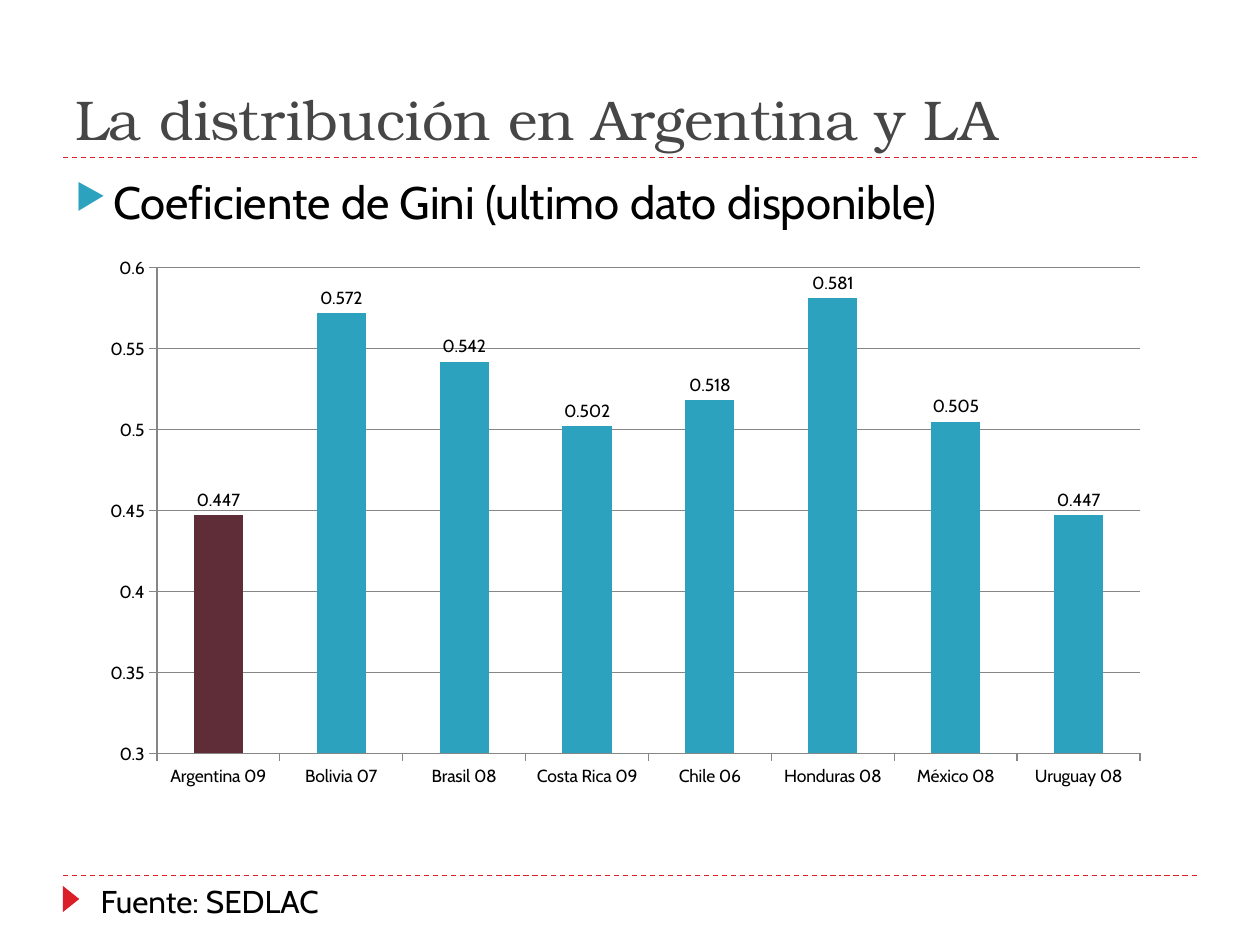
import pptx
import pptx.chart.data
import pptx.dml.color
import pptx.enum.chart
import pptx.enum.dml
import pptx.enum.shapes
import pptx.enum.text
import pptx.oxml
import pptx.oxml.ns
import pptx.util
from lxml import etree

Pt = pptx.util.Pt
qn = pptx.oxml.ns.qn
COLORS = {"red": "DA1F28", "title": "464646", "text": "000000",
          "bar": "2DA2BF", "argentina": "5E2D37", "grid": "868686"}


def rgb(name):
    return pptx.dml.color.RGBColor.from_string(COLORS[name])


def add_text(left, top, width, height, text, size, font, color):
    box = slide.shapes.add_textbox(Pt(left), Pt(top), Pt(width), Pt(height))
    box.text_frame.word_wrap = True
    run = box.text_frame.paragraphs[0].add_run()
    run.text = text
    run.font.size = Pt(size)
    run.font.name = font
    run.font.color.rgb = rgb(color)
    return box.text_frame


deck = pptx.Presentation()
deck.slide_width, deck.slide_height = Pt(720), Pt(540)
slide = deck.slides.add_slide(deck.slide_layouts[6])

# Dashed rules under the title and above the footer
for y in (500.4, 90):
    rule = slide.shapes.add_connector(
        pptx.enum.shapes.MSO_CONNECTOR.STRAIGHT, Pt(36), Pt(y), Pt(684), Pt(y))
    rule.line.color.rgb = rgb("red")
    rule.line.width = Pt(0.75)
    rule.line.dash_style = pptx.enum.dml.MSO_LINE.DASH
    etree.SubElement(rule.element.spPr, qn("a:effectLst"))

# Footer marker
marker = slide.shapes.add_shape(
    pptx.enum.shapes.MSO_SHAPE.ISOSCELES_TRIANGLE, Pt(33.1), Pt(509), Pt(15), Pt(9.4))
marker.rotation = 90
marker.shadow.inherit = False
marker.fill.solid()
marker.fill.fore_color.rgb = rgb("red")
marker.line.fill.background()

# Title
title = add_text(36, 12.2, 648, 77.8, "La distribución en Argentina y LA",
                 32, "TeX Gyre Bonum", "title")
title.vertical_anchor = pptx.enum.text.MSO_ANCHOR.BOTTOM

# Subtitle with a triangular bullet
subtitle = add_text(36, 95.8, 648, 388.8, "Coeficiente de Gini (ultimo dato disponible)",
                    26, "Cabin", "text")
subtitle.paragraphs[0].space_before = Pt(6)
bullet = subtitle.paragraphs[0]._p.get_or_add_pPr()
bullet.set("marL", str(Pt(21.6)))
bullet.set("indent", str(Pt(-21.6)))
bullet_color = etree.SubElement(bullet, qn("a:buClr"))
etree.SubElement(bullet_color, qn("a:srgbClr"), val=COLORS["bar"])
etree.SubElement(bullet, qn("a:buSzPct"), val="76000")
etree.SubElement(bullet, qn("a:buChar"), char="▶")

# Gini chart
gini = {"Argentina 09": 0.447, "Bolivia 07": 0.572, "Brasil 08": 0.542,
        "Costa Rica 09": 0.502, "Chile 06": 0.518, "Honduras 08": 0.581,
        "México 08": 0.505, "Uruguay 08": 0.447}
chart_data = pptx.chart.data.CategoryChartData()
chart_data.categories = list(gini)
chart_data.add_series("Series 1", list(gini.values()))
chart = slide.shapes.add_chart(
    pptx.enum.chart.XL_CHART_TYPE.COLUMN_CLUSTERED,
    Pt(50.4), Pt(140.4), Pt(613.4), Pt(315.4), chart_data).chart
chart.has_legend = False
chart.has_title = False
chart.font.size = Pt(10)
chart.font.name = "Cabin"
chart.font.color.rgb = rgb("text")

# Bars and value labels
columns = chart.plots[0]
columns.gap_width = 150
columns.vary_by_categories = False
series = columns.series[0]
series.invert_if_negative = False
for bar, color in ((series, "bar"), (series.points[0], "argentina")):
    bar.format.fill.solid()
    bar.format.fill.fore_color.rgb = rgb(color)
columns.has_data_labels = True
columns.data_labels.show_value = True
columns.data_labels.position = pptx.enum.chart.XL_LABEL_POSITION.OUTSIDE_END

# Axes and gridlines
values = chart.value_axis
values.minimum_scale, values.maximum_scale, values.major_unit = 0.3, 0.6, 0.05
values.has_major_gridlines = True
values.tick_labels.number_format = "General"
values.tick_labels.number_format_is_linked = False
for axis in (values, chart.category_axis):
    axis.major_tick_mark = pptx.enum.chart.XL_TICK_MARK.OUTSIDE
for ruled in (values, chart.category_axis, values.major_gridlines):
    ruled.format.line.color.rgb = rgb("grid")
    ruled.format.line.width = Pt(0.75)

# Plot area position, as shares of the chart frame
plot_area = chart.element.find(".//" + qn("c:plotArea"))
for old_layout in plot_area.findall(qn("c:layout")):
    plot_area.remove(old_layout)
layout = etree.Element(qn("c:layout"))
plot_area.insert(0, layout)
manual = etree.SubElement(layout, qn("c:manualLayout"))
for tag, val in (("layoutTarget", "inner"), ("xMode", "edge"), ("yMode", "edge"),
                 ("x", "0.064"), ("y", "0.04"), ("w", "0.916"), ("h", "0.88")):
    etree.SubElement(manual, qn("c:" + tag), val=val)

# Source note
source_note = add_text(50.4, 500.4, 270, 28.8, "Fuente: SEDLAC", 18, "Cabin", "text")
source_note.auto_size = pptx.enum.text.MSO_AUTO_SIZE.SHAPE_TO_FIT_TEXT

deck.save("out.pptx")
